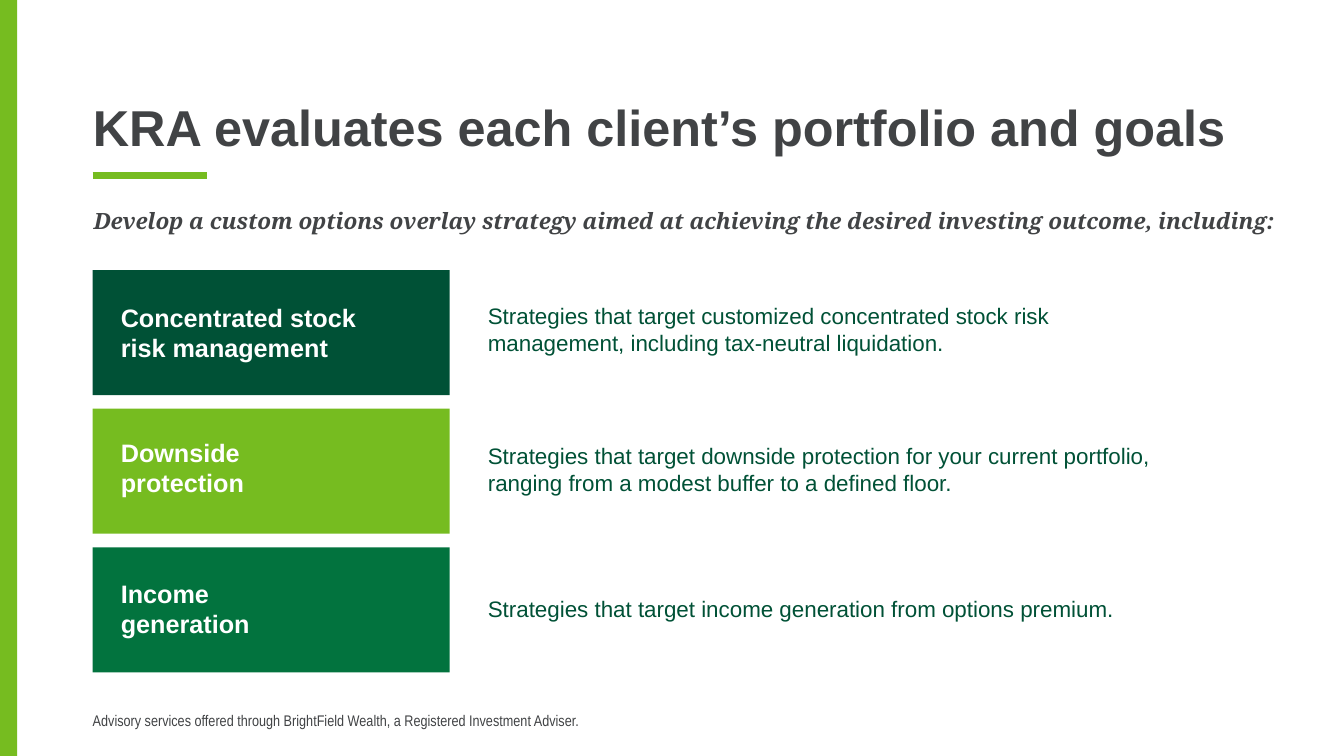
from typing import NamedTuple

from lxml import etree
from pptx import Presentation
from pptx import util as u
from pptx.dml.color import RGBColor
from pptx.enum import shapes, text
from pptx.oxml.ns import qn

LIME = RGBColor(0x76, 0xBC, 0x20)
FOREST = RGBColor(0x00, 0x51, 0x36)
GREEN = RGBColor(0x02, 0x73, 0x3E)
CHARCOAL = RGBColor(0x41, 0x43, 0x45)
WHITE = RGBColor(0xFF, 0xFF, 0xFF)

MARGIN = 0.92
CARD_TOP, CARD_PITCH = 2.68, 1.375
CARD_WIDTH, CARD_HEIGHT = 3.54, 1.24


class Box(NamedTuple):
    left: float
    top: float
    width: float
    height: float

    def lengths(self) -> list[u.Length]:
        return [u.Inches(value) for value in self]


class Style(NamedTuple):
    size: int
    color: RGBColor
    name: str = "Arial"
    bold: bool = False
    italic: bool = False


class Strategy(NamedTuple):
    label: str
    label_box: Box
    description: str
    description_box: Box
    fill: RGBColor


TITLE = Style(36, CHARCOAL, bold=True)
LEAD = Style(16, CHARCOAL, "Noto Serif", bold=True, italic=True)
LABEL = Style(18, WHITE, bold=True)
DESCRIPTION = Style(16, FOREST)
FOOTNOTE = Style(11, CHARCOAL, "Arial Narrow")

STRATEGIES = [
    Strategy("Concentrated stock risk management", Box(1.1, 2.95, 3, 0.71),
             "Strategies that target customized concentrated stock risk management, "
             "including tax-neutral liquidation.", Box(4.74, 2.95, 6.78, 0.64), FOREST),
    Strategy("Downside protection", Box(1.1, 4.29, 2.25, 0.71),
             "Strategies that target downside protection for your current portfolio, "
             "ranging from a modest buffer to a defined floor.",
             Box(4.74, 4.34, 6.78, 0.64), LIME),
    Strategy("Income generation", Box(1.1, 5.69, 2.25, 0.71),
             "Strategies that target income generation from options premium.",
             Box(4.74, 5.86, 6.78, 0.37), GREEN),
]


def write(shape, content: str, style: Style):
    """Fill a shape with one styled paragraph and return that paragraph."""
    frame = shape.text_frame
    frame.word_wrap = True
    frame.text = content
    paragraph = frame.paragraphs[0]
    font = paragraph.font
    font.name, font.size = style.name, u.Pt(style.size)
    font.bold, font.italic = style.bold, style.italic
    font.color.rgb = style.color
    return paragraph


def remove_insets(shape, anchor) -> None:
    frame = shape.text_frame
    frame.margin_left = frame.margin_right = 0
    frame.margin_top = frame.margin_bottom = 0
    frame.vertical_anchor = anchor


def add_text(slide, box: Box, content: str, style: Style):
    shape = slide.shapes.add_textbox(*box.lengths())
    return shape, write(shape, content, style)


def add_block(slide, box: Box, color: RGBColor) -> None:
    shape = slide.shapes.add_shape(shapes.MSO_SHAPE.RECTANGLE, *box.lengths())
    shape.shadow.inherit = False
    shape.fill.solid()
    shape.fill.fore_color.rgb = color
    shape.line.fill.background()


def add_rule(slide, left: float, right: float, top: float) -> None:
    rule = slide.shapes.add_connector(
        shapes.MSO_CONNECTOR.STRAIGHT,
        u.Inches(left), u.Inches(top), u.Inches(right), u.Inches(top))
    rule.line.color.rgb = LIME
    rule.line.width = u.Pt(5)
    etree.SubElement(rule._element.spPr, qn("a:effectLst"))


def main() -> None:
    presentation = Presentation()
    presentation.slide_width = u.Inches(13.33)
    presentation.slide_height = u.Inches(7.5)
    slide = presentation.slides.add_slide(presentation.slide_layouts[5])

    # Side band and rule under the title
    add_block(slide, Box(0, 0, 0.17, 7.5), LIME)
    add_rule(slide, MARGIN, 2.05, 1.74)

    # Title
    title = slide.shapes.title
    title.left, title.top, title.width, title.height = Box(MARGIN, 0.32, 11.73, 1.24).lengths()
    heading = write(title, "KRA evaluates each client’s portfolio and goals", TITLE)
    heading.alignment = text.PP_ALIGN.LEFT
    heading.line_spacing = 0.9
    title.text_frame.auto_size = text.MSO_AUTO_SIZE.NONE
    remove_insets(title, text.MSO_ANCHOR.BOTTOM)

    # Lead sentence
    _, lead = add_text(
        slide, Box(0.83, 2.04, 12.5, 0.48),
        "Develop a custom options overlay strategy aimed at achieving "
        "the desired investing outcome, including:", LEAD)
    lead.line_spacing = 0.9
    lead.space_before = u.Pt(10)

    # Strategy cards with their descriptions
    for index, strategy in enumerate(STRATEGIES):
        top = CARD_TOP + index * CARD_PITCH
        add_block(slide, Box(MARGIN, top, CARD_WIDTH, CARD_HEIGHT), strategy.fill)
        add_text(slide, strategy.label_box, strategy.label, LABEL)
        _, description = add_text(
            slide, strategy.description_box, strategy.description, DESCRIPTION)
        description.space_after = u.Pt(12)

    # Footnote
    footnote, _ = add_text(
        slide, Box(MARGIN, 6.95, 7.64, 0.4),
        "Advisory services offered through BrightField Wealth, "
        "a Registered Investment Adviser.", FOOTNOTE)
    remove_insets(footnote, text.MSO_ANCHOR.MIDDLE)

    presentation.save("out.pptx")


if __name__ == "__main__":
    main()
